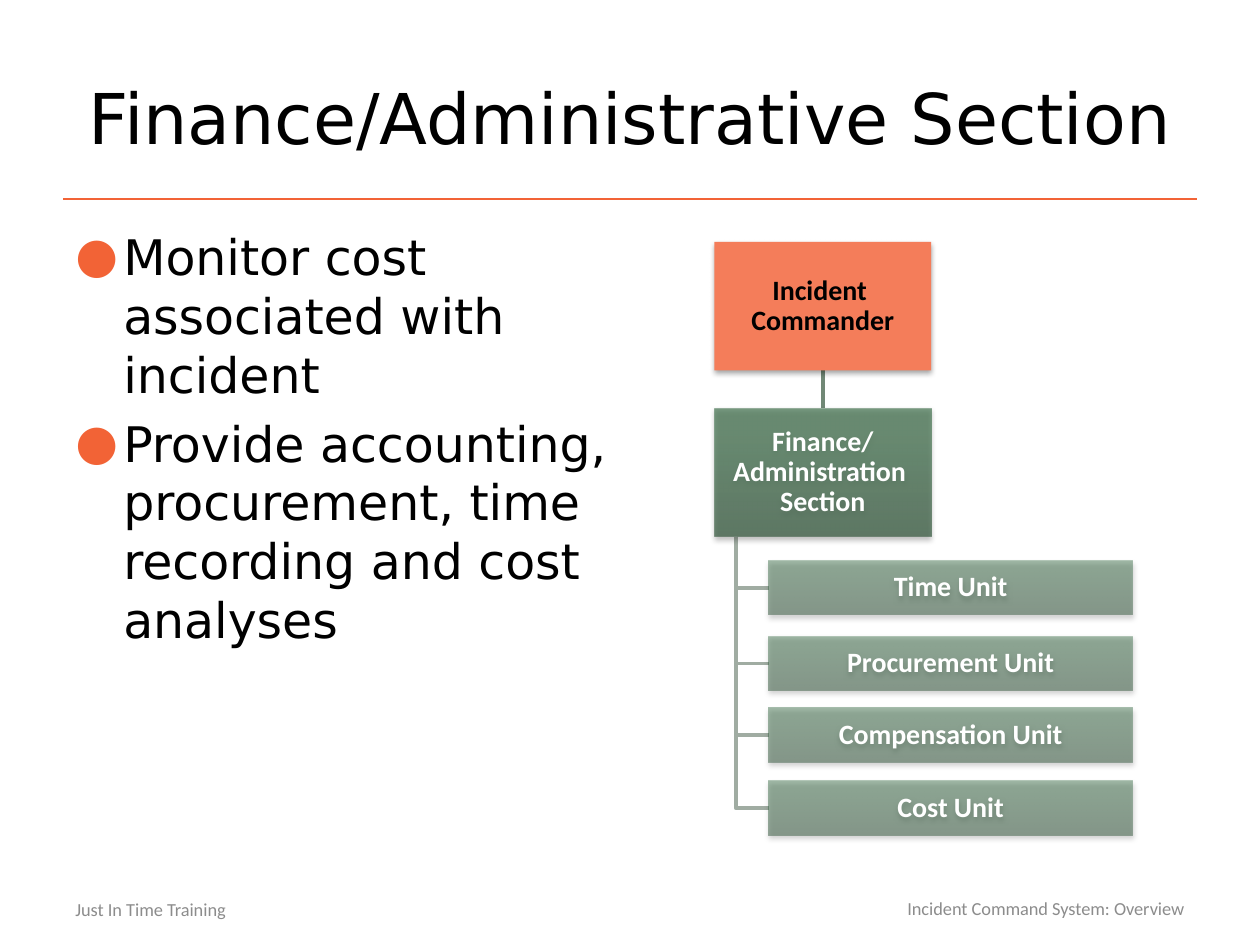
from dataclasses import dataclass

from lxml.etree import SubElement
from pptx import Presentation
from pptx.dml.color import RGBColor
from pptx.enum.shapes import MSO_CONNECTOR, MSO_SHAPE
from pptx.enum.text import MSO_ANCHOR, PP_ALIGN
from pptx.oxml.ns import qn
from pptx.shapes.autoshape import Shape
from pptx.slide import Slide
from pptx.text.text import TextFrame
from pptx.util import Inches, Pt

BLACK = RGBColor(0x00, 0x00, 0x00)
WHITE = RGBColor(0xFF, 0xFF, 0xFF)
ORANGE = RGBColor(0xF2, 0x63, 0x36)
SALMON = RGBColor(0xF4, 0x7D, 0x5A)
DARK_GREEN = RGBColor(0x34, 0x58, 0x3D)
GREEN = RGBColor(0x43, 0x73, 0x4F)
STEM_GREEN = RGBColor(0x71, 0x88, 0x76)
BRANCH_GREEN = RGBColor(0xA0, 0xAC, 0xA2)
GRAY = RGBColor(0x8C, 0x8C, 0x8C)

HEADING_FONT = "DejaVu Sans"
CHART_FONT = "Calibri"


@dataclass(frozen=True)
class Box:
    left: float
    top: float
    width: float
    height: float


@dataclass(frozen=True)
class Role:
    label: str
    box: Box
    opacity: int = 100


@dataclass(frozen=True)
class Caption:
    text: str
    box: Box
    size: float
    font: str
    color: RGBColor
    align: PP_ALIGN


COMMANDER = Role("Incident \vCommander", Box(5.67, 1.92, 1.72, 1.02))
SECTION = Role("Finance/\vAdministration \vSection", Box(5.67, 3.24, 1.72, 1.02), 70)
UNITS = [
    Role(label, Box(6.1, top, 2.89, 0.43), 50)
    for label, top in (
        ("Time Unit", 4.45),
        ("Procurement Unit", 5.05),
        ("Compensation Unit", 5.62),
        ("Cost Unit", 6.2),
    )
]
CAPTIONS = [
    Caption("Finance/Administrative Section", Box(0.5, 0.3, 9, 1.25), 40,
            HEADING_FONT, BLACK, PP_ALIGN.CENTER),
    Caption("Just In Time Training", Box(0.5, 7.08, 2.33, 0.27), 10.5,
            CHART_FONT, GRAY, PP_ALIGN.LEFT),
    Caption("Incident Command System: Overview", Box(6.33, 7.08, 3.17, 0.25), 10.5,
            CHART_FONT, GRAY, PP_ALIGN.RIGHT),
]
DUTIES = [
    "Monitor cost associated with incident",
    "Provide accounting, procurement, time recording and cost analyses",
]


def placed(box: Box) -> tuple:
    return Inches(box.left), Inches(box.top), Inches(box.width), Inches(box.height)


def add_text_frame(slide: Slide, box: Box) -> TextFrame:
    frame = slide.shapes.add_textbox(*placed(box)).text_frame
    frame.word_wrap = True
    return frame


def style(paragraph, size: float, font: str, color: RGBColor, bold: bool = False) -> None:
    for run in paragraph.runs:
        run.font.size = Pt(size)
        run.font.name = font
        run.font.color.rgb = color
        run.font.bold = bold


def add_caption(slide: Slide, caption: Caption) -> None:
    frame = add_text_frame(slide, caption.box)
    frame.vertical_anchor = MSO_ANCHOR.MIDDLE
    frame.text = caption.text
    frame.paragraphs[0].alignment = caption.align
    style(frame.paragraphs[0], caption.size, caption.font, caption.color)


def add_duties(slide: Slide, box: Box) -> None:
    frame = add_text_frame(slide, box)
    for index, duty in enumerate(DUTIES):
        paragraph = frame.paragraphs[0] if index == 0 else frame.add_paragraph()
        paragraph.text = duty
        properties = paragraph._p.get_or_add_pPr()
        properties.set("marL", str(Inches(0.38)))
        properties.set("indent", str(-Inches(0.38)))
        bullet_color = SubElement(properties, qn("a:buClr"))
        SubElement(bullet_color, qn("a:srgbClr"), val=str(ORANGE))
        SubElement(properties, qn("a:buFont"), typeface=HEADING_FONT)
        SubElement(properties, qn("a:buChar"), char="●")
        if index:
            paragraph.space_before = Pt(5.6)
        style(paragraph, 28, HEADING_FONT, BLACK)


def add_line(slide: Slide, start: tuple, end: tuple, color: RGBColor, width: float) -> None:
    line = slide.shapes.add_connector(
        MSO_CONNECTOR.STRAIGHT, *(Inches(value) for value in start + end)
    )
    line.line.color.rgb = color
    line.line.width = Pt(width)
    SubElement(line._element.spPr, qn("a:effectLst"))


def add_branch(slide: Slide, unit: Role) -> None:
    trunk = Inches(5.84)
    middle = Inches(unit.box.top + unit.box.height / 2)
    builder = slide.shapes.build_freeform(trunk, Inches(SECTION.box.top + SECTION.box.height))
    builder.add_line_segments([(trunk, middle), (Inches(unit.box.left), middle)], close=False)
    branch = builder.convert_to_shape()
    branch.shadow.inherit = False
    branch.fill.background()
    branch.line.color.rgb = BRANCH_GREEN
    branch.line.width = Pt(2)


def fill_gradient(shape: Shape, opacity: int) -> None:
    shape.fill.gradient()
    shape.fill.gradient_angle = 90
    stops = shape.fill.gradient_stops
    for stop, color, position in zip(stops, (DARK_GREEN, GREEN), (0, 0.8)):
        stop.color.rgb = color
        stop.position = position
    for color in shape._element.spPr.iter(qn("a:srgbClr")):
        SubElement(color, qn("a:alpha"), val=str(opacity * 1000))


def add_shadow(shape: Shape) -> None:
    shape.shadow.inherit = False
    effects = shape._element.spPr.find(qn("a:effectLst"))
    shadow = SubElement(
        effects, qn("a:outerShdw"), blurRad=str(Pt(3.1)), dist=str(Pt(1.8)),
        dir="5400000", rotWithShape="0",
    )
    color = SubElement(shadow, qn("a:srgbClr"), val=str(BLACK))
    SubElement(color, qn("a:alpha"), val="35000")


def add_role(slide: Slide, role: Role) -> None:
    card = slide.shapes.add_shape(MSO_SHAPE.RECTANGLE, *placed(role.box))
    card.line.fill.background()
    if role.opacity < 100:
        fill_gradient(card, role.opacity)
    else:
        card.fill.solid()
        card.fill.fore_color.rgb = SALMON
    add_shadow(card)
    frame = card.text_frame
    frame.word_wrap = True
    frame.vertical_anchor = MSO_ANCHOR.MIDDLE
    frame.margin_left = frame.margin_right = Inches(0.01)
    frame.margin_top = frame.margin_bottom = Inches(0.01)
    frame.text = role.label
    label = frame.paragraphs[0]
    label.alignment = PP_ALIGN.CENTER
    label.line_spacing = 0.9
    style(label, 16, CHART_FONT, BLACK if role is COMMANDER else WHITE, bold=True)


def main() -> None:
    presentation = Presentation()
    presentation.slide_width = Inches(10)
    presentation.slide_height = Inches(7.5)
    slide = presentation.slides.add_slide(presentation.slide_layouts[6])

    add_line(slide, (0.5, 1.58), (9.5, 1.58), ORANGE, 1.25)
    for unit in reversed(UNITS):
        add_branch(slide, unit)
    add_line(slide, (6.53, 2.94), (6.53, 3.24), STEM_GREEN, 2)
    for role in (COMMANDER, SECTION, *UNITS):
        add_role(slide, role)
    add_duties(slide, Box(0.5, 1.75, 4.42, 4.95))
    for caption in CAPTIONS:
        add_caption(slide, caption)
    presentation.save("out.pptx")


if __name__ == "__main__":
    main()
